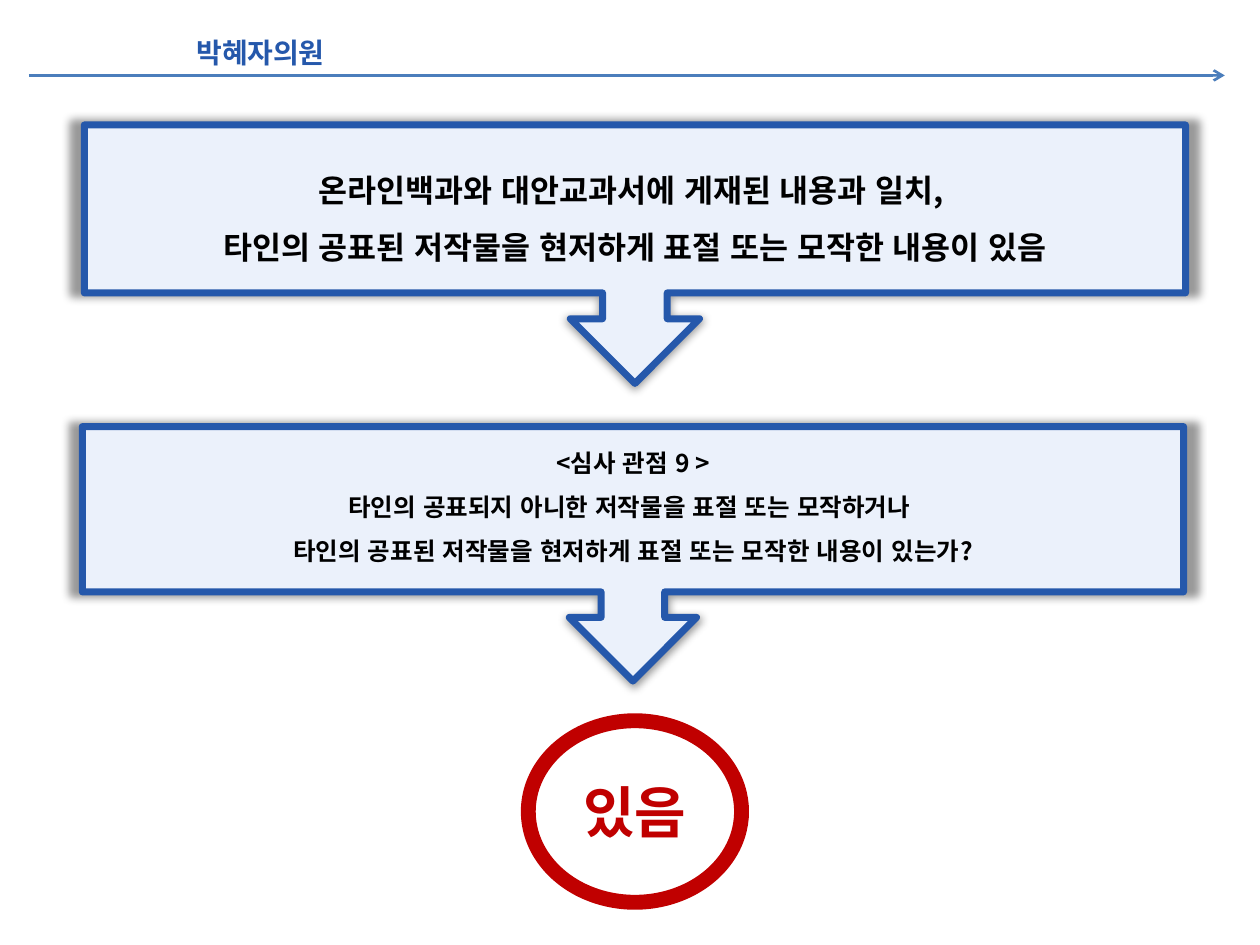
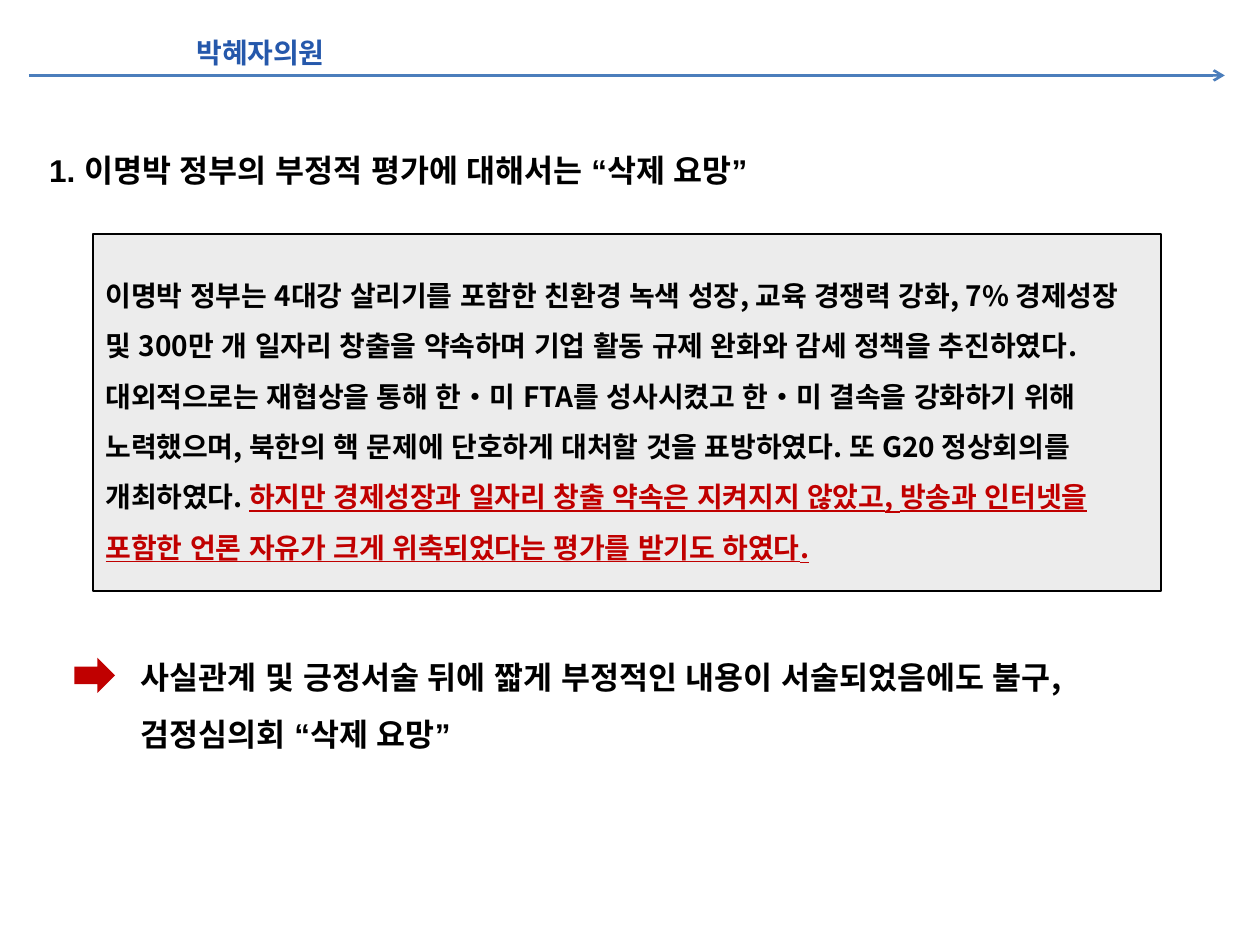
from lxml import etree
from pptx import Presentation
from pptx import util as u
from pptx.dml.color import RGBColor
from pptx.enum import lang, shapes, text
from pptx.oxml.ns import qn

COLORS = {
    "blue": "2558AB",
    "rule": "4B7EBC",
    "pale": "EBF1FB",
    "grey": "ECECEC",
    "red": "C00000",
    "black": "000000",
}
KOREAN = "Noto Sans CJK KR"
LATIN = "Arial"
LINE_PITCH = 1.8  # line distance as a multiple of the text size


def rgb(name):
    return RGBColor.from_string(COLORS[name])


def write(frame, lines, size, color="black", font=KOREAN, align=text.PP_ALIGN.LEFT,
          anchor=text.MSO_ANCHOR.TOP, spaced=True):
    """Fill a frame; each line is a list of (words, colour or None) parts."""
    frame.word_wrap = True
    frame.vertical_anchor = anchor
    frame.margin_left = frame.margin_right = u.Cm(0.25)
    frame.margin_top = frame.margin_bottom = u.Cm(0.13)
    for index, parts in enumerate(lines):
        paragraph = frame.paragraphs[0] if index == 0 else frame.add_paragraph()
        paragraph.alignment = align
        if spaced:
            paragraph.line_spacing = u.Pt(size * LINE_PITCH)
        for words, accent in parts:
            run = paragraph.add_run()
            run.text = words
            run.font.size = u.Pt(size)
            run.font.bold = True
            run.font.name = font
            run.font.language_id = lang.MSO_LANGUAGE_ID.KOREAN
            run.font.color.rgb = rgb(accent or color)
            if accent:
                run.font.underline = True
            # Arial sets the width of the spaces between Korean words
            east_asian = etree.SubElement(run.font._element, qn("a:ea"))
            east_asian.set("typeface", LATIN)


deck = Presentation()
deck.slide_width, deck.slide_height = u.Cm(25.4), u.Cm(19.05)
title_only = deck.slide_layouts[5]
verdict_slide, deletion_slide = [deck.slides.add_slide(title_only) for _ in range(2)]

# Header shared by both slides
for slide in deck.slides:
    member = slide.shapes.title
    member.left, member.top, member.width, member.height = map(u.Cm, (3.71, 0.58, 3.73, 0.94))
    write(member.text_frame, [[("박혜자의원", None)]], 16, "blue", LATIN, spaced=False)

    rule = slide.shapes.add_connector(
        shapes.MSO_CONNECTOR.STRAIGHT, u.Cm(0.58), u.Cm(1.52), u.Cm(24.69), u.Cm(1.52))
    rule.line.color.rgb = rgb("rule")
    rule.line.width = u.Pt(1.5)
    etree.SubElement(rule.line._get_or_add_ln(), qn("a:tailEnd"), type="arrow")
    etree.SubElement(rule._element.spPr, qn("a:effectLst"))

# Slide 1: finding, review criterion, verdict
steps = [
    ((1.7, 2.52, 22.2, 5.21), 18, text.MSO_ANCHOR.MIDDLE,
     ["온라인백과와 대안교과서에 게재된 내용과 일치, ",
      "타인의 공표된 저작물을 현저하게 표절 또는 모작한 내용이 있음"]),
    ((1.66, 8.6, 22.2, 5.13), 14, text.MSO_ANCHOR.TOP,
     ["<심사 관점 9 >",
      "타인의 공표되지 아니한 저작물을 표절 또는 모작하거나 ",
      "타인의 공표된 저작물을 현저하게 표절 또는 모작한 내용이 있는가?"]),
]
for place, size, anchor, lines in steps:
    step = verdict_slide.shapes.add_shape(
        shapes.MSO_SHAPE.DOWN_ARROW_CALLOUT, *map(u.Cm, place))
    step.fill.solid()
    step.fill.fore_color.rgb = rgb("pale")
    step.line.color.rgb = rgb("blue")
    step.line.width = u.Pt(4)
    step.shadow.inherit = False
    glow = etree.SubElement(
        step._element.spPr.find(qn("a:effectLst")), qn("a:outerShdw"),
        blurRad=str(u.Pt(5)), sx="102000", sy="102000", algn="ctr", rotWithShape="0")
    shade = etree.SubElement(glow, qn("a:srgbClr"), val=COLORS["black"])
    etree.SubElement(shade, qn("a:alpha"), val="40000")
    write(step.text_frame, [[(line, None)] for line in lines], size,
          align=text.PP_ALIGN.CENTER, anchor=anchor)

verdict = verdict_slide.shapes.add_shape(
    shapes.MSO_SHAPE.OVAL, *map(u.Cm, (10.65, 14.53, 4.3, 3.66)))
verdict.fill.background()
verdict.line.color.rgb = rgb("red")
verdict.line.width = u.Pt(8.5)
verdict.shadow.inherit = False
write(verdict.text_frame, [[("있음", None)]], 32, "red", align=text.PP_ALIGN.CENTER,
      anchor=text.MSO_ANCHOR.MIDDLE, spaced=False)

# Slide 2: heading, quoted passage, conclusion
heading = deletion_slide.shapes.add_textbox(*map(u.Cm, (0.74, 2.92, 18.8, 1.02)))
write(heading.text_frame, [[("1. 이명박 정부의 부정적 평가에 대해서는 “삭제 요망”", None)]],
      18, font=LATIN, spaced=False)

passage = deletion_slide.shapes.add_shape(
    shapes.MSO_SHAPE.RECTANGLE, *map(u.Cm, (1.88, 4.72, 21.53, 7.2)))
passage.fill.solid()
passage.fill.fore_color.rgb = rgb("grey")
passage.line.color.rgb = rgb("black")
passage.line.width = u.Pt(1)
passage.shadow.inherit = False
write(passage.text_frame, [[
    ("이명박 정부는 4대강 살리기를 포함한 친환경 녹색 성장, 교육 경쟁력 강화, 7% "
     "경제성장 및 300만 개 일자리 창출을 약속하며 기업 활동 규제 완화와 감세 정책을 "
     "추진하였다. 대외적으로는 재협상을 통해 한‧미 FTA를 성사시켰고 한‧미 결속을 "
     "강화하기 위해 노력했으며, 북한의 핵 문제에 단호하게 대처할 것을 표방하였다. 또 G20 "
     "정상회의를 개최하였다. ", None),
    ("하지만 경제성장과 일자리 창출 약속은 지켜지지 않았고, 방송과 "
     "인터넷을 포함한 언론 자유가 크게 위축되었다는 평가를 받기도 하였다.", "red"),
]], 16, anchor=text.MSO_ANCHOR.MIDDLE)

conclusion = deletion_slide.shapes.add_textbox(*map(u.Cm, (2.59, 12.76, 21.51, 2.41)))
write(conclusion.text_frame, [[
    ("사실관계 및 긍정서술 뒤에 짧게 부정적인 내용이 서술되었음에도 불구, "
     "검정심의회 “삭제 요망”", None)]], 18)

pointer = deletion_slide.shapes.add_shape(
    shapes.MSO_SHAPE.RIGHT_ARROW, *map(u.Cm, (1.5, 13.26, 0.82, 0.71)))
pointer.fill.solid()
pointer.fill.fore_color.rgb = rgb("red")
pointer.line.fill.background()
pointer.shadow.inherit = False

deck.save("out.pptx")
